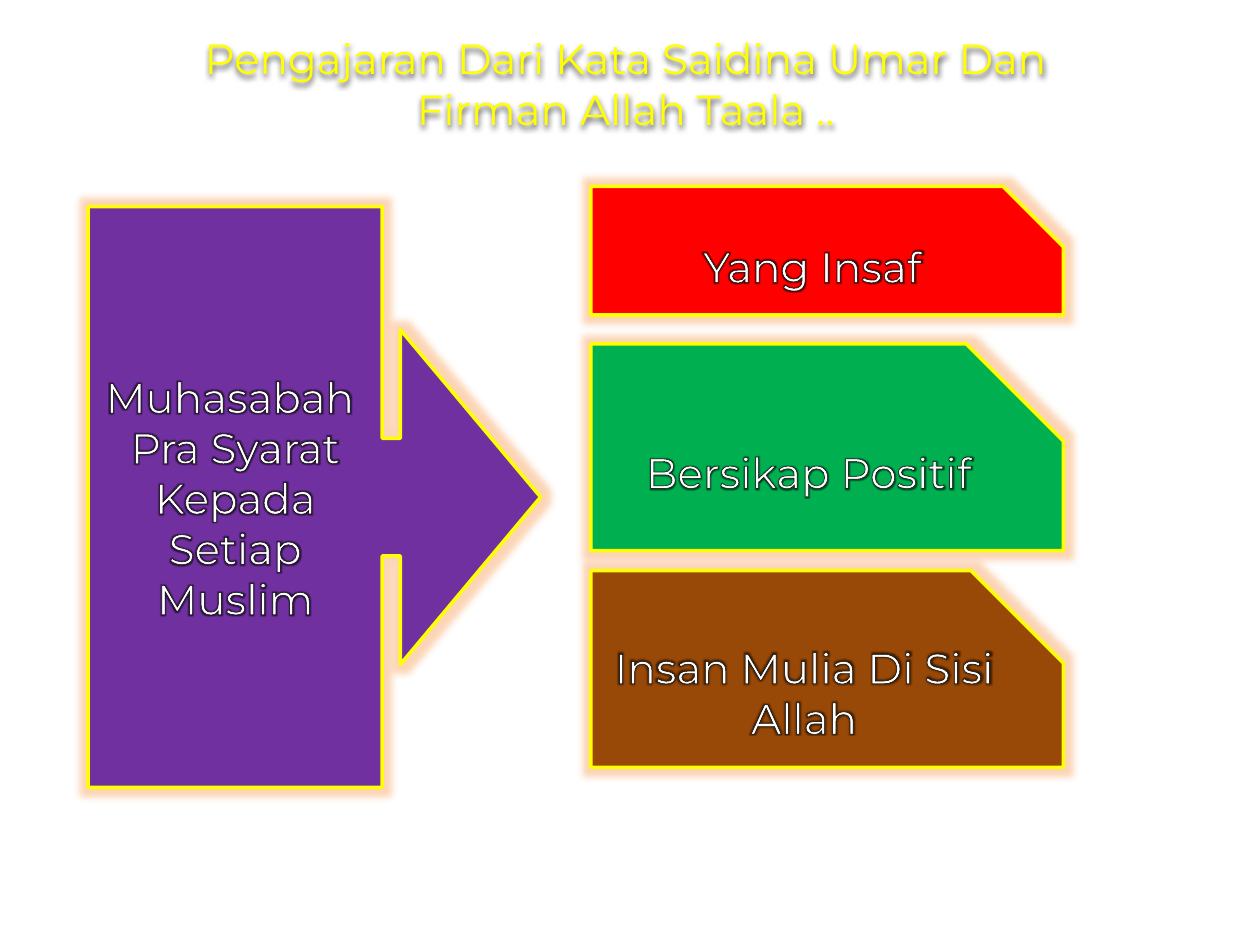
from lxml.etree import SubElement as Sub
from pptx import Presentation
from pptx.dml.color import RGBColor
from pptx.enum.shapes import MSO_SHAPE as Kind
from pptx.enum.text import MSO_ANCHOR as Anchor, PP_ALIGN as Align
from pptx.oxml.ns import qn
from pptx.util import Inches, Pt

TITLE = "Pengajaran Dari Kata Saidina Umar Dan Firman Allah Taala .."
CAUSE = "Muhasabah  Pra Syarat Kepada Setiap Muslim"
RESULTS = [
    ("Yang Insaf", "FF0000", 1.48, 1.02),
    (" Bersikap Positif", "00B050", 2.73, 1.64),
    ("Insan Mulia Di Sisi Allah", "984807", 4.53, 1.56),
]


def rgb(code):
    return RGBColor.from_string(code)


def tint(node, code, alpha):
    clr = Sub(node, qn("a:srgbClr"), val=code)
    Sub(clr, qn("a:alpha"), val=str(alpha * 1000))


def glow(props, code, alpha, size):
    fx = props.find(qn("a:effectLst"))
    if fx is None:
        fx = Sub(props, qn("a:effectLst"))
    tint(Sub(fx, qn("a:glow"), rad=str(Pt(size))), code, alpha)


def write(shape, text, color="FFFFFF", size=24, face="Montserrat", halo=True):
    frame = shape.text_frame
    frame.word_wrap = True
    frame.vertical_anchor = Anchor.MIDDLE
    para = frame.paragraphs[0]
    para.alignment = Align.CENTER
    run = para.add_run()
    run.text = text
    props = run.font._element if hasattr(run.font, "_element") else run._r.get_or_add_rPr()
    edge = Sub(props, qn("a:ln"), w=str(Pt(0.75)))
    Sub(Sub(edge, qn("a:solidFill")), qn("a:srgbClr"), val="000000")
    run.font.color.rgb = rgb(color)
    if halo:
        glow(props, "000000", 60, 3)
    run.font.size = Pt(size)
    run.font.name = face


def block(kind, box, fill, text, adjust):
    shape = slide.shapes.add_shape(kind, *map(Inches, box))
    for i, value in enumerate(adjust):
        shape.adjustments[i] = value
    shape.fill.solid()
    shape.fill.fore_color.rgb = rgb(fill)
    shape.line.color.rgb = rgb("FFFF00")
    shape.line.width = Pt(2)
    shape.shadow.inherit = False
    glow(shape._element.spPr, "F79646", 40, 8)
    write(shape, text)


deck = Presentation()
deck.slide_width, deck.slide_height = Inches(10), Inches(7.5)
slide = deck.slides.add_slide(deck.slide_layouts[5])

title = slide.shapes.title
title.left, title.top, title.width, title.height = map(Inches, (1.33, 0.23, 7.27, 0.86))
write(title, TITLE, color="FFFF00", halo=False)
title.shadow.inherit = False
fx = title._element.spPr.find(qn("a:effectLst"))
cast = Sub(fx, qn("a:outerShdw"), blurRad=str(Pt(3)), dist=str(Pt(1.5)), dir="5400000")
tint(cast, "000000", 70)

block(Kind.RIGHT_ARROW_CALLOUT, (0.7, 1.64, 3.59, 4.61), "7030A0", CAUSE,
      (0.26, 0.37, 0.31, 0.65))
for text, fill, top, height in RESULTS:
    block(Kind.SNIP_1_RECTANGLE, (4.69, top, 3.75, height), fill, text, (0.47,))

deck.save("out.pptx")
